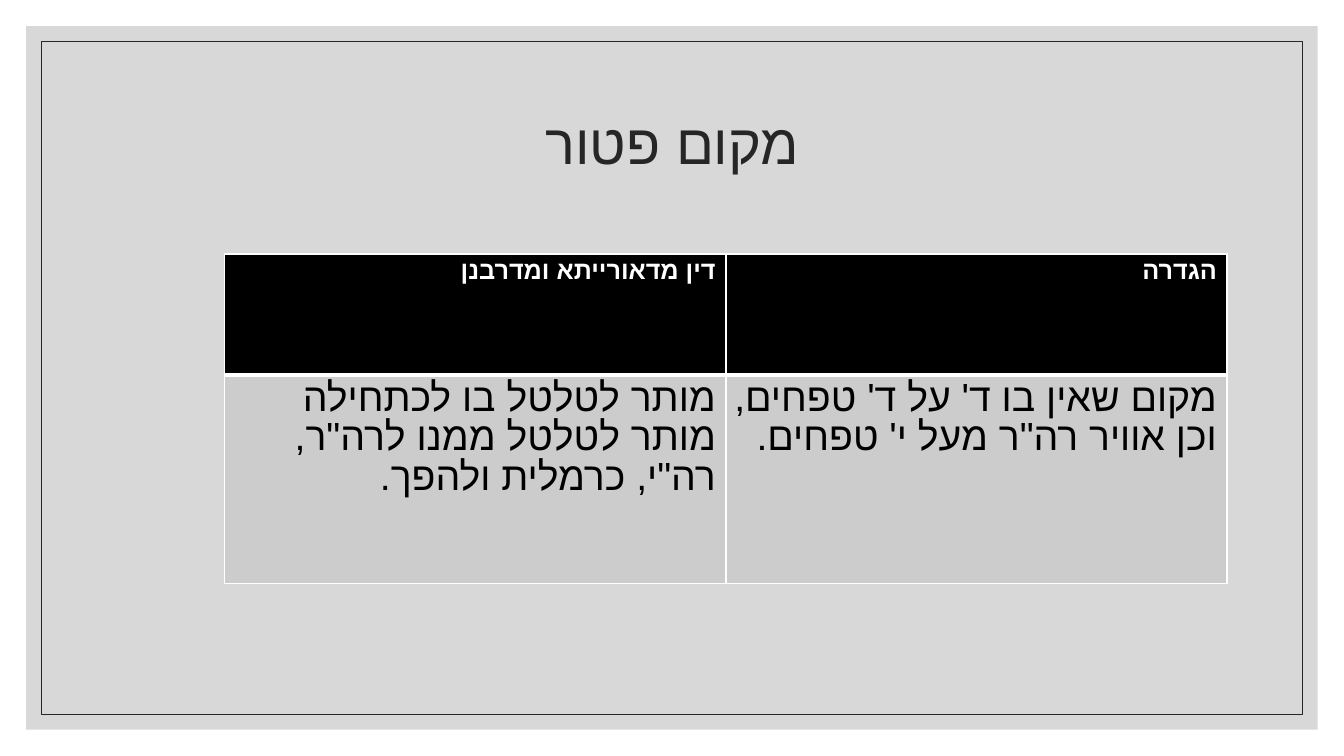
from lxml import etree
from pptx import Presentation
from pptx.dml.color import RGBColor
from pptx.enum.shapes import MSO_SHAPE
from pptx.enum.text import MSO_ANCHOR, PP_ALIGN
from pptx.oxml.ns import qn
from pptx.util import Inches, Pt

TITLE = "מקום פטור"
HEADERS = ["דין מדאורייתא ומדרבנן", "הגדרה"]
RULINGS = [
    "מותר לטלטל בו לכתחילה\nמותר לטלטל ממנו לרה\"ר, רה\"י, כרמלית ולהפך.",
    "מקום שאין בו ד' על ד' טפחים, וכן אוויר רה\"ר מעל י' טפחים.",
]
COLORS = {"panel": "BFBFBF", "ink": "262626", "header": "000000",
          "body": "CCCCCC", "white": "FFFFFF", "black": "000000"}
FONT = "Arial"
WIDTH, HEIGHT = 13.33, 7.5
PANEL_MARGIN, FRAME_MARGIN = 0.26, 0.41
TITLE_BOX = (1.17, 0.7, 11, 1.5)
TABLE_LEFT, TABLE_TOP, COLUMN_WIDTH = 2.23, 2.52, 4.97
ROW_HEIGHTS = [1.2, 2.07]
CELL_LEFT_MARGIN = 0.02
LINE_SPACING = 0.9
THIN, THICK = 1, 3
RECTANGLE = MSO_SHAPE.RECTANGLE
CENTER, RIGHT = PP_ALIGN.CENTER, PP_ALIGN.RIGHT
MIDDLE = MSO_ANCHOR.MIDDLE


def color(name):
    return RGBColor.from_string(COLORS[name])


def write_hebrew(text_frame, text, size, color_name, alignment, bold=False):
    text_frame.text = text
    for paragraph in text_frame.paragraphs:
        paragraph.alignment = alignment
        paragraph.line_spacing = LINE_SPACING
        paragraph._p.get_or_add_pPr().set("rtl", "1")
        for run in paragraph.runs:
            run.font.size = Pt(size)
            run.font.bold = bold
            run.font.name = FONT
            run.font.color.rgb = color(color_name)
            properties = run._r.get_or_add_rPr()
            properties.set("lang", "he-IL")
            etree.SubElement(properties, qn("a:cs"), typeface=FONT)


def add_margin_rectangle(slide, margin):
    shape = slide.shapes.add_shape(
        RECTANGLE, Inches(margin), Inches(margin),
        Inches(WIDTH - 2 * margin), Inches(HEIGHT - 2 * margin))
    shape.shadow.inherit = False
    return shape


def set_borders(cell, widths):
    """Draw white borders; widths maps each side (L, R, T, B) to points."""
    properties = cell._tc.get_or_add_tcPr()
    for position, (side, width) in enumerate(widths.items()):
        line = etree.Element(qn(f"a:ln{side}"), w=str(Pt(width)))
        fill = etree.SubElement(line, qn("a:solidFill"))
        etree.SubElement(fill, qn("a:srgbClr"), val=COLORS["white"])
        properties.insert(position, line)


def add_background(slide):
    panel = add_margin_rectangle(slide, PANEL_MARGIN)
    panel.fill.solid()
    panel.fill.fore_color.rgb = color("panel")
    panel.line.fill.background()
    panel_color = panel._element.spPr.find(qn("a:solidFill"))[0]
    etree.SubElement(panel_color, qn("a:alpha"), val="60000")

    frame = add_margin_rectangle(slide, FRAME_MARGIN)
    frame.fill.background()
    frame.line.color.rgb = color("ink")
    frame.line.width = Pt(0.5)


def add_title(slide):
    text_frame = slide.shapes.add_textbox(*map(Inches, TITLE_BOX)).text_frame
    text_frame.word_wrap = True
    text_frame.vertical_anchor = MIDDLE
    write_hebrew(text_frame, TITLE, 40, "ink", CENTER)


def add_rulings_table(slide):
    table = slide.shapes.add_table(
        len(ROW_HEIGHTS), len(HEADERS), Inches(TABLE_LEFT), Inches(TABLE_TOP),
        Inches(COLUMN_WIDTH * len(HEADERS)), Inches(sum(ROW_HEIGHTS))).table
    for column in table.columns:
        column.width = Inches(COLUMN_WIDTH)
    for row, height in zip(table.rows, ROW_HEIGHTS):
        row.height = Inches(height)

    row_styles = [
        (HEADERS, 18, "white", True, "header", {"T": THIN, "B": THICK}),
        (RULINGS, 28, "black", False, "body", {"T": THICK, "B": THIN}),
    ]
    for row, style in zip(table.rows, row_styles):
        texts, size, text_color, bold, fill_color, edges = style
        for cell, text in zip(row.cells, texts):
            cell.margin_left = Inches(CELL_LEFT_MARGIN)
            cell.fill.solid()
            cell.fill.fore_color.rgb = color(fill_color)
            set_borders(cell, {"L": THIN, "R": THIN, **edges})
            write_hebrew(cell.text_frame, text, size, text_color, RIGHT, bold)


def main():
    presentation = Presentation()
    presentation.slide_width = Inches(WIDTH)
    presentation.slide_height = Inches(HEIGHT)
    slide = presentation.slides.add_slide(presentation.slide_layouts[6])
    add_background(slide)
    add_title(slide)
    add_rulings_table(slide)
    presentation.save("out.pptx")


if __name__ == "__main__":
    main()
